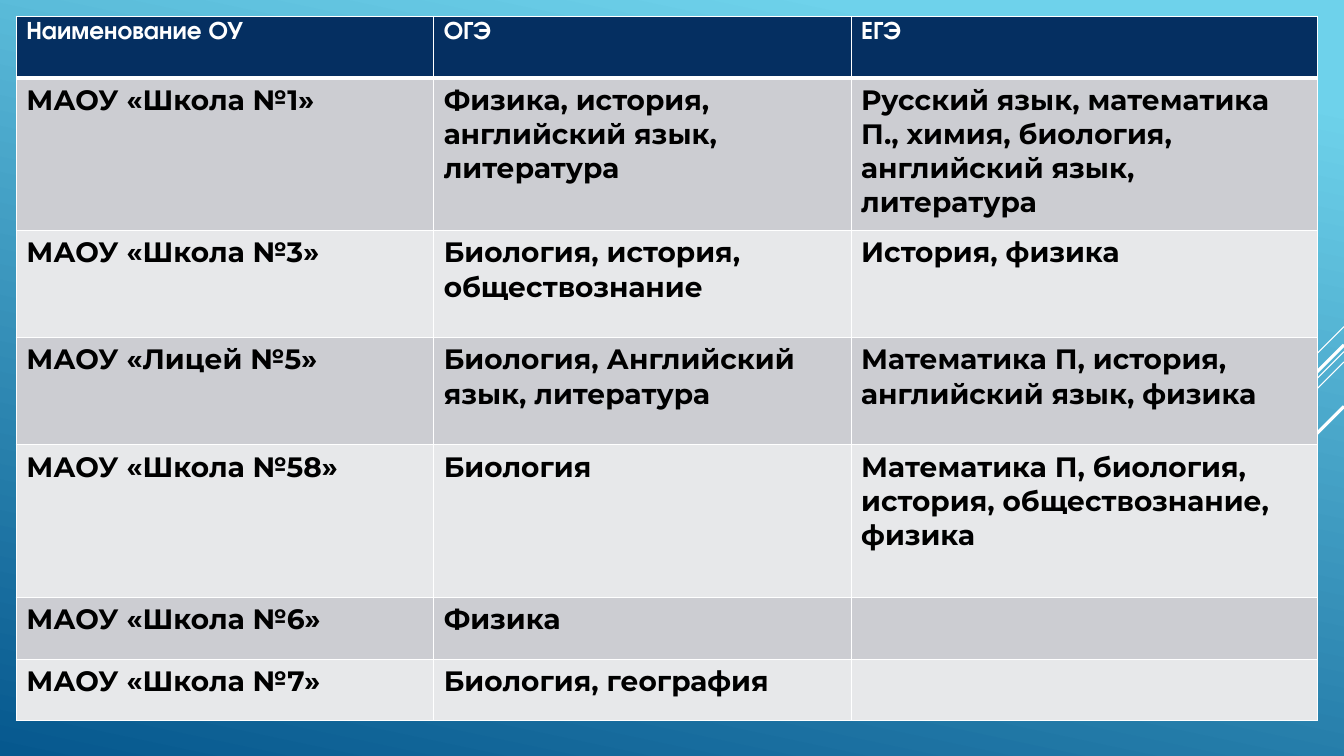
from lxml.etree import SubElement
from pptx import Presentation
from pptx.dml.color import RGBColor
from pptx.enum.shapes import MSO_CONNECTOR
from pptx.oxml.ns import qn
from pptx.util import Cm, Pt

COLORS = {
    "sky": "6ED2EB",
    "deep": "06588E",
    "navy": "052F61",
    "white": "FFFFFF",
    "black": "000000",
    "dark_band": "CCCDD2",
    "light_band": "E7E8EA",
}


def color(name):
    return RGBColor.from_string(COLORS[name])


def write_cell(cell, text, font="Montserrat", size=20, ink="black", fill="light_band", bottom=1):
    properties = cell._tc.get_or_add_tcPr()
    for side, width in (("L", 1), ("R", 1), ("T", 1), ("B", bottom)):
        border = SubElement(properties, qn(f"a:ln{side}"), w=str(Pt(width)))
        paint = SubElement(border, qn("a:solidFill"))
        SubElement(paint, qn("a:srgbClr"), val=COLORS["white"])
    cell.fill.solid()
    cell.fill.fore_color.rgb = color(fill)
    if text:
        span = cell.text_frame.paragraphs[0].add_run()
        span.text = text
        span.font.name = font
        span.font.size = Pt(size)
        span.font.bold = True
        span.font.color.rgb = color(ink)


deck = Presentation()
deck.slide_width = Cm(33.87)
deck.slide_height = Cm(19.05)
page = deck.slides.add_slide(deck.slide_layouts[6])

backdrop = page.background.fill
backdrop.gradient()
backdrop.gradient_angle = 258
for stop, position, name in zip(backdrop.gradient_stops, (0.1, 1), ("sky", "deep")):
    stop.position = position
    stop.color.rgb = color(name)

right_edge = 33.87
stripes = [
    (8.23, 2.54, 0.75),
    (8.86, 8.28, 0.75),
    (9.12, 5.27, 0.75),
    (8.69, 4.85, 2.25),
    (10.24, 3.53, 2.25),
]
for top, reach, width in stripes:
    stripe = page.shapes.add_connector(
        MSO_CONNECTOR.STRAIGHT,
        Cm(right_edge), Cm(top), Cm(right_edge - reach), Cm(top + reach),
    )
    stripe.line.color.rgb = color("white")
    stripe.line.width = Pt(width)
    SubElement(stripe._element.spPr, qn("a:effectLst"))

exams = [
    ("Наименование ОУ", "ОГЭ", "ЕГЭ"),
    ("МАОУ «Школа №1»", "Физика, история, английский язык, литература",
     "Русский язык, математика П., химия, биология, английский язык, литература"),
    ("МАОУ «Школа №3»", "Биология, история, обществознание", "История, физика"),
    ("МАОУ «Лицей №5»", "Биология, Английский язык, литература",
     "Математика П, история, английский язык, физика"),
    ("МАОУ «Школа №58»", "Биология",
     "Математика П, биология, история, обществознание, физика"),
    ("МАОУ «Школа №6»", "Физика", ""),
    ("МАОУ «Школа №7»", "Биология, география", ""),
]
column_widths = [10.52, 10.52, 11.76]
row_heights = [1.55, 3.85, 2.7, 2.7, 3.85, 1.55, 1.55]

table = page.shapes.add_table(
    len(exams), len(column_widths),
    Cm(0.41), Cm(0.41), Cm(sum(column_widths)), Cm(sum(row_heights)),
).table
for column, width in zip(table.columns, column_widths):
    column.width = Cm(width)
for row, height in zip(table.rows, row_heights):
    row.height = Cm(height)

header = {"font": "TeX Gyre Adventor", "size": 18, "ink": "white", "fill": "navy", "bottom": 3}
for index, texts in enumerate(exams):
    look = header if index == 0 else {"fill": "dark_band" if index % 2 else "light_band"}
    for cell, text in zip(table.rows[index].cells, texts):
        write_cell(cell, text, **look)

deck.save("out.pptx")
